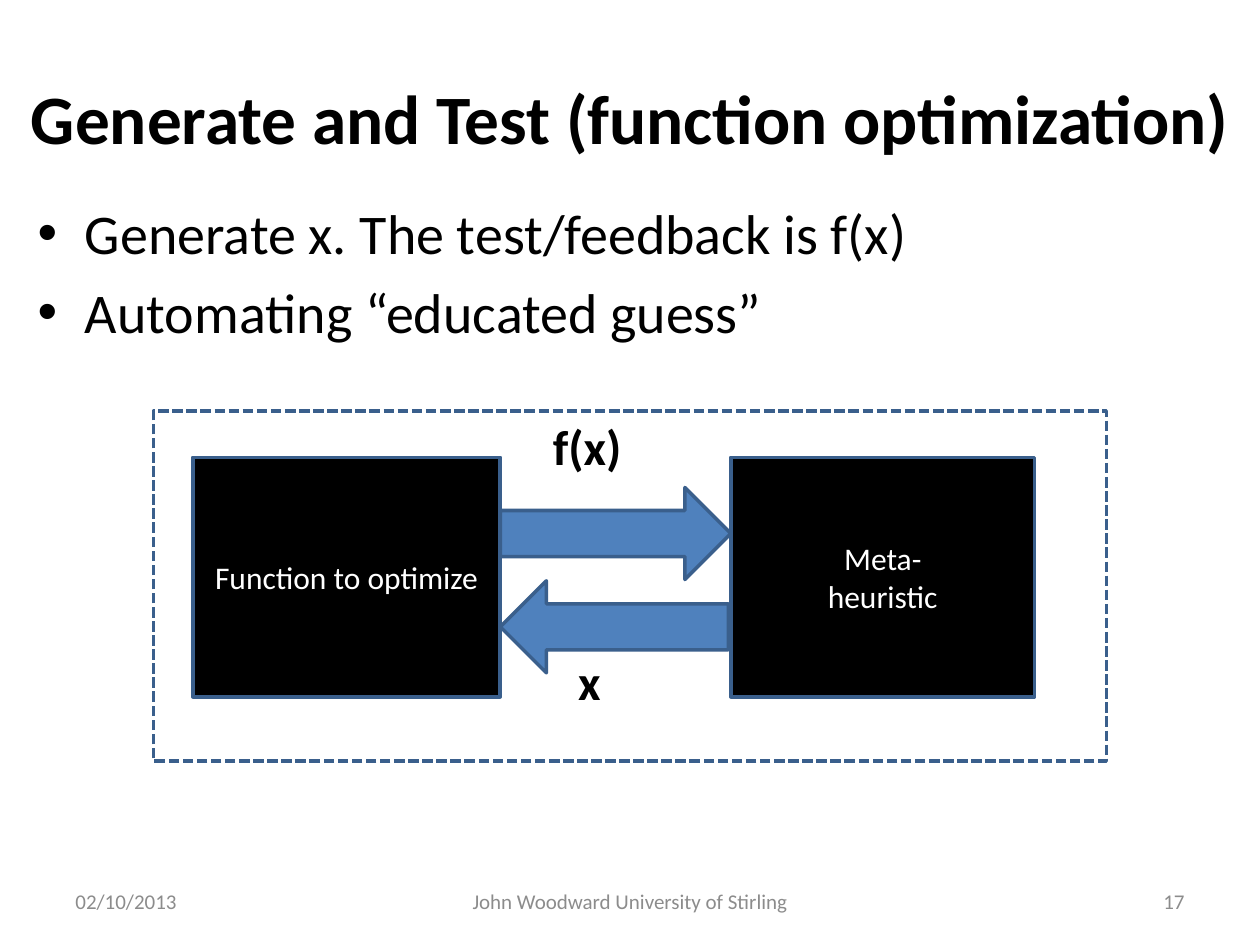
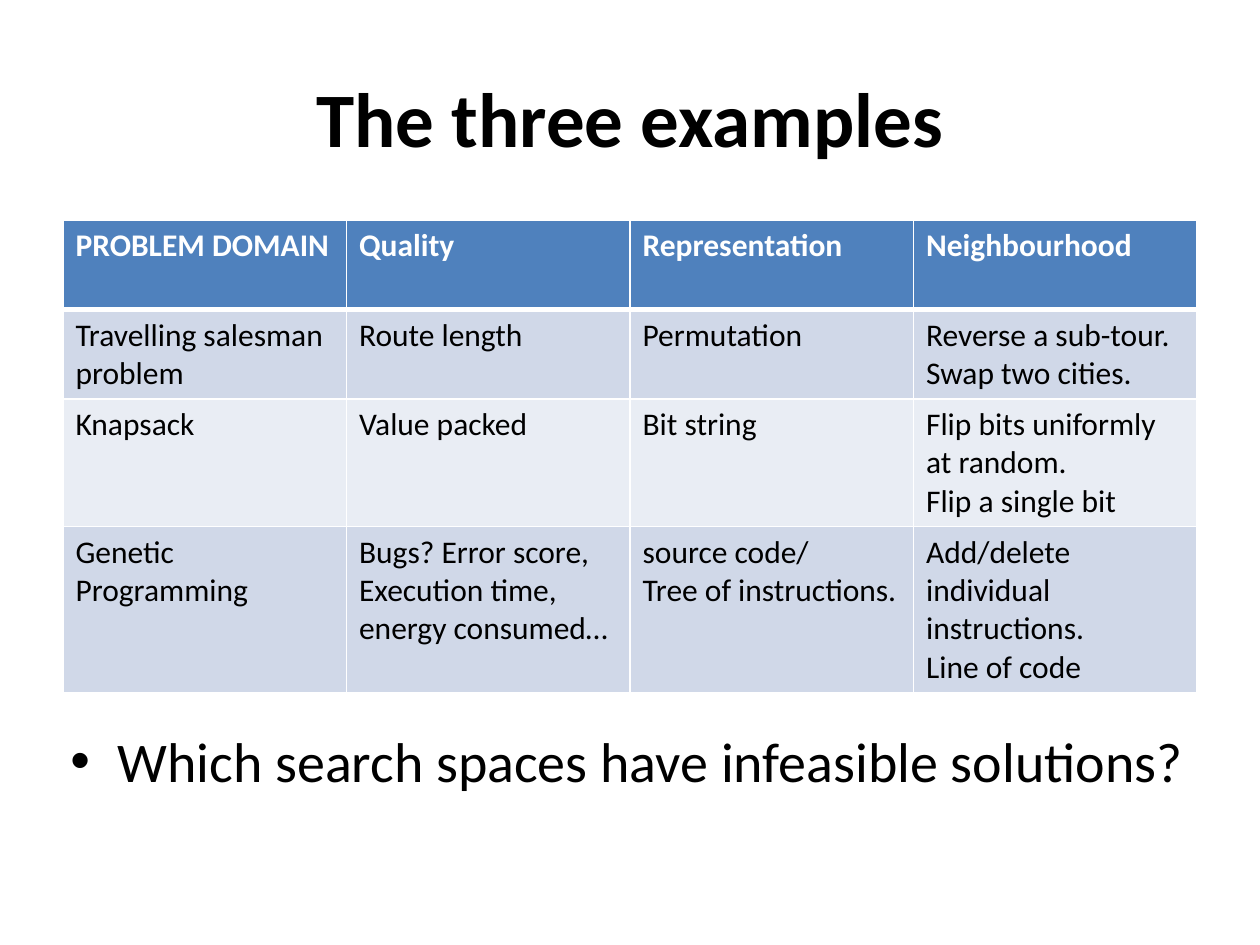
from pptx import Presentation
from pptx.dml.color import RGBColor
from pptx.enum.dml import MSO_LINE
from pptx.enum.shapes import MSO_SHAPE
from pptx.enum.text import MSO_ANCHOR, PP_ALIGN
from pptx.oxml.ns import qn
from pptx.util import Pt
from lxml.etree import SubElement

# Shared style
FONT = "Calibri"
BLACK = RGBColor(0x00, 0x00, 0x00)
WHITE = RGBColor(0xFF, 0xFF, 0xFF)
GREY = RGBColor(0x8C, 0x8C, 0x8C)
BLUE = RGBColor(0x4F, 0x81, 0xBD)
OUTLINE = RGBColor(0x3A, 0x5F, 0x8C)
BAND_DARK = RGBColor(0xD0, 0xD8, 0xE8)
BAND_LIGHT = RGBColor(0xE9, 0xED, 0xF4)

PAGE_WIDTH, PAGE_HEIGHT = 720, 540
BULLET_INDENT = 27

# Example table: header first, line breaks separate paragraphs
EXAMPLES = [
    ["PROBLEM DOMAIN", "Quality", "Representation", "Neighbourhood"],
    ["Travelling salesman problem", "Route length", "Permutation",
     "Reverse a sub-tour.\nSwap two cities."],
    ["Knapsack", "Value packed", "Bit string",
     "Flip bits uniformly at random.\nFlip a single bit"],
    ["Genetic\nProgramming", "Bugs? Error score, Execution time, energy consumed…",
     "source code/\nTree of instructions.",
     "Add/delete individual instructions.\nLine of code"],
]
ROW_HEIGHTS = [51, 51, 73, 95]
COLUMN_WIDTH = 162


def write(frame, text, size, color=BLACK, bold=False, align=PP_ALIGN.LEFT):
    """Fill a text frame with one paragraph per line of text."""
    frame.word_wrap = True
    for index, line in enumerate(text.split("\n")):
        para = frame.paragraphs[0] if index == 0 else frame.add_paragraph()
        para.alignment = align
        span = para.add_run()
        span.text = line
        span.font.name = FONT
        span.font.size = Pt(size)
        span.font.bold = bold
        span.font.color.rgb = color


def add_text(page, area, text, size, anchor=MSO_ANCHOR.TOP, **style):
    box = page.shapes.add_textbox(*map(Pt, area))
    box.text_frame.vertical_anchor = anchor
    write(box.text_frame, text, size, **style)
    return box


def add_title(page, text, size, margin):
    add_text(page, (margin, 21.6, PAGE_WIDTH - 2 * margin, 90), text, size,
             MSO_ANCHOR.MIDDLE, bold=True, align=PP_ALIGN.CENTER)


def add_bullets(page, area, text):
    box = add_text(page, area, text, 32)
    for para in box.text_frame.paragraphs:
        para.space_before = Pt(6.4)
        properties = para._p.get_or_add_pPr()
        properties.set("marL", str(Pt(BULLET_INDENT)))
        properties.set("indent", str(-Pt(BULLET_INDENT)))
        SubElement(properties, qn("a:buFont"), typeface="Arial")
        SubElement(properties, qn("a:buChar"), char="•")


def add_footer(page, date, author, number):
    for left, width, text, align in (
        (36, 168, date, PP_ALIGN.LEFT),
        (246, 228, author, PP_ALIGN.CENTER),
        (516, 168, number, PP_ALIGN.RIGHT),
    ):
        add_text(page, (left, 500.5, width, 28.75), text, 12,
                 MSO_ANCHOR.MIDDLE, color=GREY, align=align)


def add_outlined(page, kind, area, fill=None, text=""):
    shape = page.shapes.add_shape(kind, *map(Pt, area))
    shape.shadow.inherit = False
    if fill is None:
        shape.fill.background()
    else:
        shape.fill.solid()
        shape.fill.fore_color.rgb = fill
    shape.line.color.rgb = OUTLINE
    shape.line.width = Pt(2)
    if text:
        shape.text_frame.vertical_anchor = MSO_ANCHOR.MIDDLE
        write(shape.text_frame, text, 18, WHITE, align=PP_ALIGN.CENTER)
    return shape


def add_borders(cell, top, bottom):
    properties = cell._tc.get_or_add_tcPr()
    for side, width in (("L", 1), ("R", 1), ("T", top), ("B", bottom)):
        line = SubElement(properties, qn(f"a:ln{side}"), w=str(Pt(width)))
        fill = SubElement(line, qn("a:solidFill"))
        SubElement(fill, qn("a:srgbClr"), val=str(WHITE))


def add_banded_table(page, left, top, rows):
    columns = len(rows[0])
    table = page.shapes.add_table(
        len(rows), columns, Pt(left), Pt(top),
        Pt(COLUMN_WIDTH * columns), Pt(sum(ROW_HEIGHTS))).table
    for column in table.columns:
        column.width = Pt(COLUMN_WIDTH)
    for row, texts in enumerate(rows):
        table.rows[row].height = Pt(ROW_HEIGHTS[row])
        header = row == 0
        band = BLUE if header else BAND_DARK if row % 2 else BAND_LIGHT
        for column, text in enumerate(texts):
            cell = table.cell(row, column)
            add_borders(cell, 3 if row == 1 else 1, 3 if header else 1)
            cell.fill.solid()
            cell.fill.fore_color.rgb = band
            write(cell.text_frame, text, 18, WHITE if header else BLACK, header)


def build_generate_and_test(page):
    add_title(page, "Generate and Test (function optimization)", 39.6, 0)
    add_bullets(page, (14.4, 110, 675, 415),
                "Generate x. The test/feedback is f(x)\nAutomating “educated guess”")
    add_footer(page, "02/10/2013", "John Woodward University of Stirling", "17")

    # Feedback loop inside a dashed frame
    frame = add_outlined(page, MSO_SHAPE.RECTANGLE, (87.8, 234.7, 544.4, 200.2))
    frame.line.dash_style = MSO_LINE.SQUARE_DOT
    add_outlined(page, MSO_SHAPE.RECTANGLE, (417.6, 261.4, 173.7, 136.8),
                 BLACK, "Meta-\nheuristic")
    add_outlined(page, MSO_SHAPE.RECTANGLE, (110.2, 261.4, 175.7, 136.8),
                 BLACK, "Function to optimize")
    add_outlined(page, MSO_SHAPE.LEFT_ARROW, (285.9, 331.9, 130.3, 52.6), BLUE)
    add_outlined(page, MSO_SHAPE.RIGHT_ARROW, (285.9, 278.6, 131.8, 52.6), BLUE)
    add_text(page, (323.3, 368.6, 56, 41), "x", 28, bold=True)
    add_text(page, (308.9, 234.7, 117, 41), "f(x)", 28, bold=True)


def build_three_examples(page):
    add_title(page, "The three examples", 44, 36)
    add_banded_table(page, 36, 126, EXAMPLES)
    add_bullets(page, (33.1, 411.8, 669.6, 53.3),
                "Which search spaces have infeasible solutions?")


def main():
    deck = Presentation()
    deck.slide_width, deck.slide_height = Pt(PAGE_WIDTH), Pt(PAGE_HEIGHT)
    blank = deck.slide_layouts[6]
    for build in (build_generate_and_test, build_three_examples):
        build(deck.slides.add_slide(blank))
    deck.save("out.pptx")


if __name__ == "__main__":
    main()
